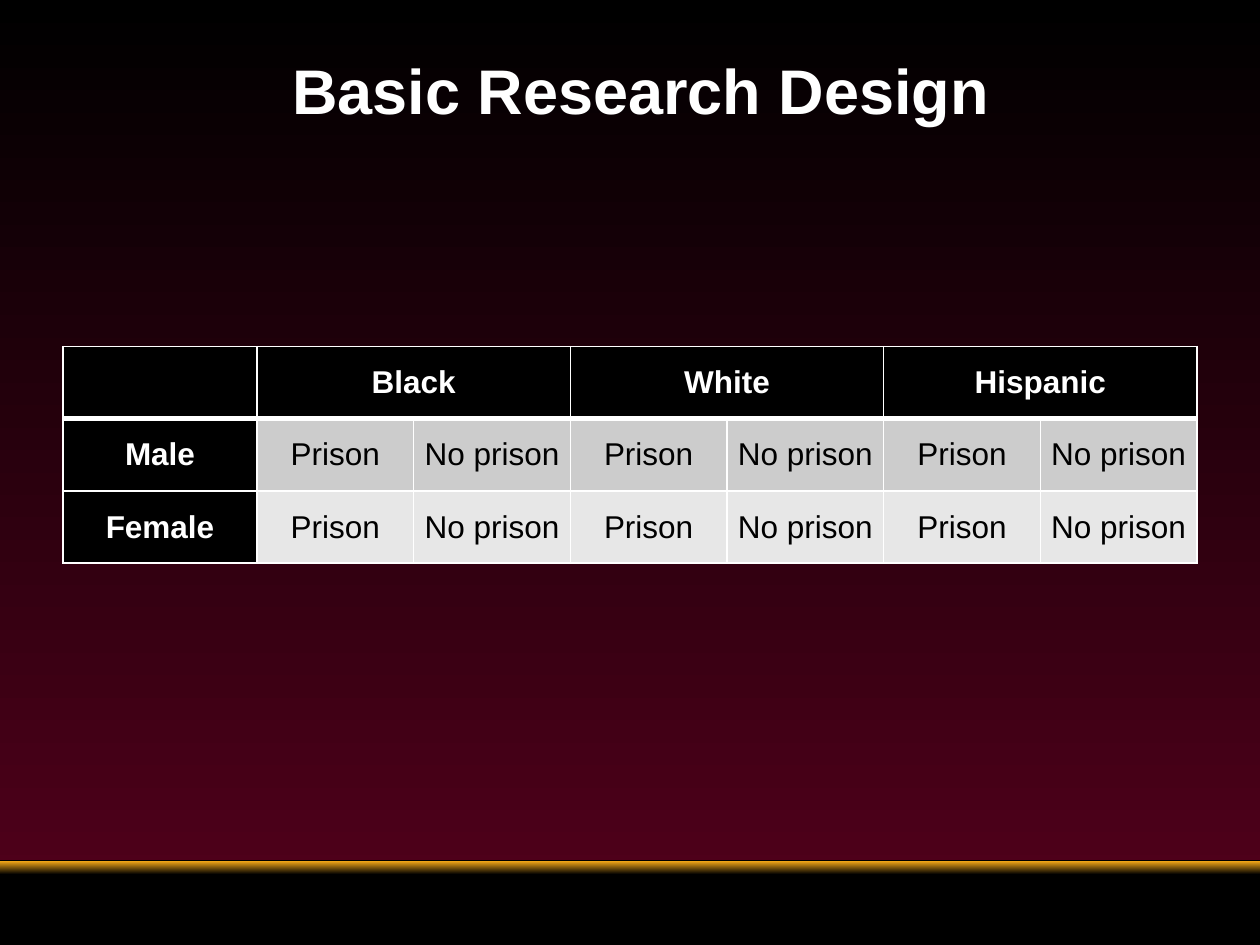
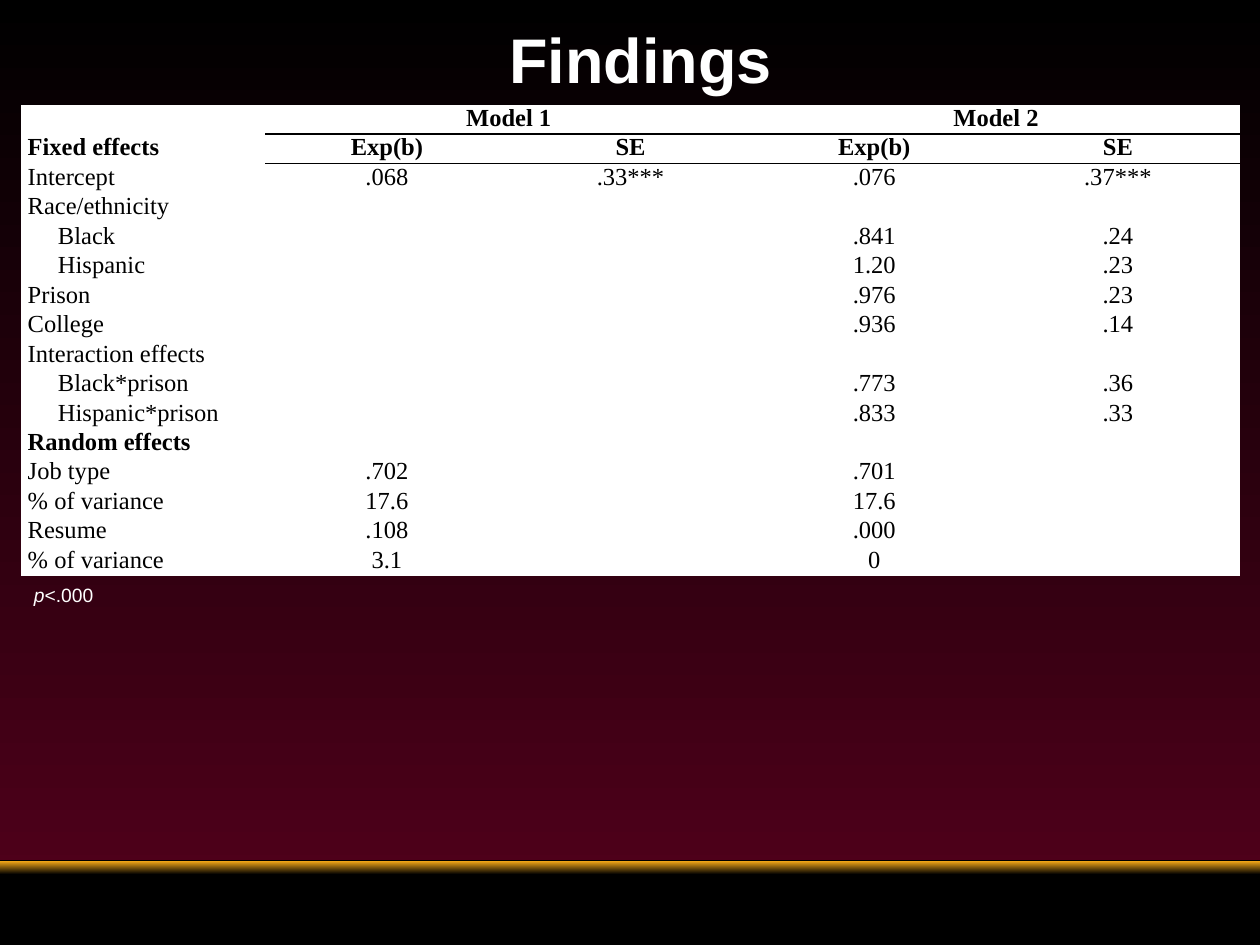
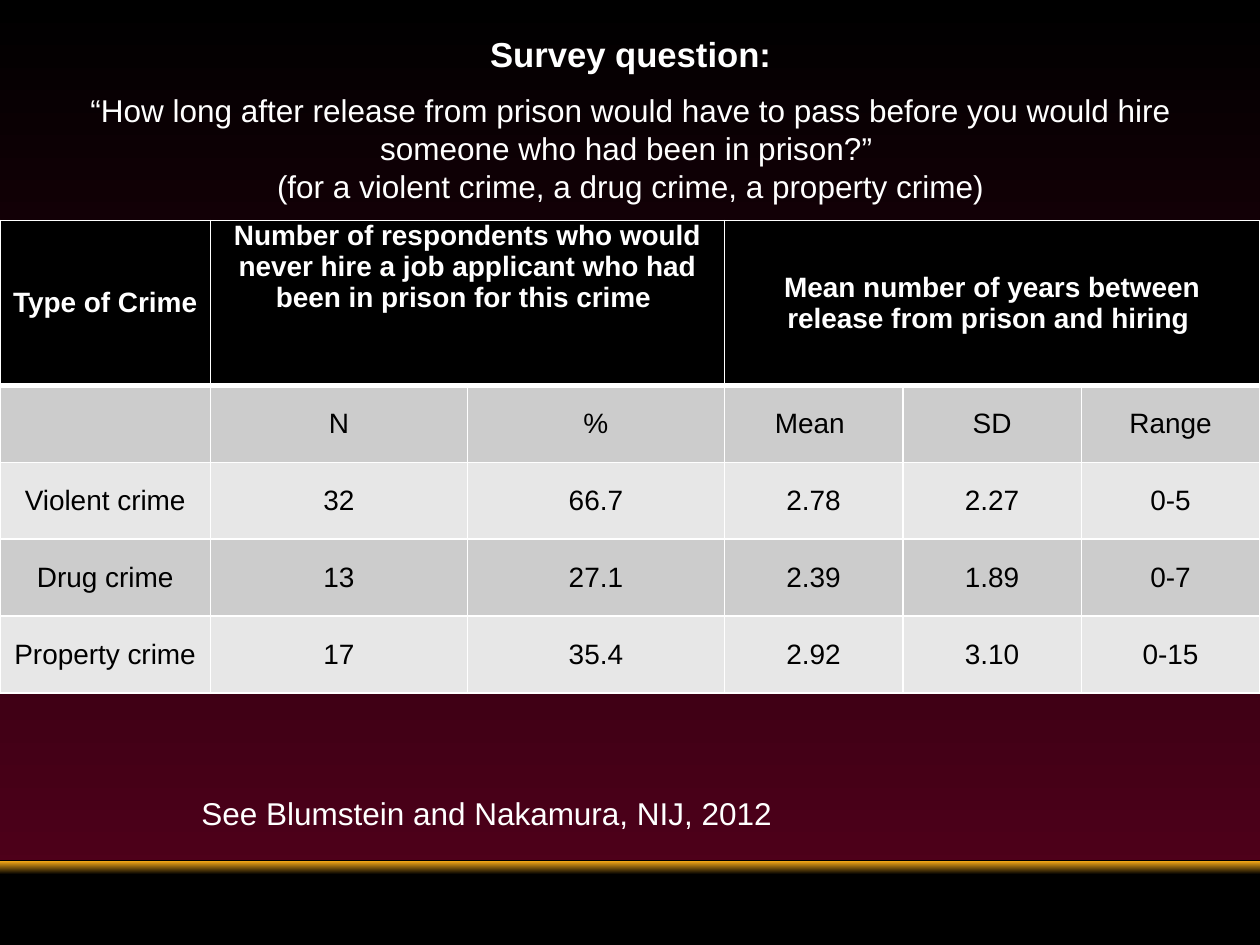
from dataclasses import dataclass, field

from lxml import etree
from pptx import Presentation
from pptx.dml.color import RGBColor
from pptx.enum.shapes import MSO_SHAPE
from pptx.enum.text import MSO_ANCHOR, PP_ALIGN
from pptx.oxml.ns import qn
from pptx.util import Inches, Pt

RECTANGLE = MSO_SHAPE.RECTANGLE
TOP, MIDDLE = MSO_ANCHOR.TOP, MSO_ANCHOR.MIDDLE
LEFT, CENTER = PP_ALIGN.LEFT, PP_ALIGN.CENTER

BLACK, WHITE = "000000", "FFFFFF"
MAROON, GOLD = "54001C", "FFAF18"
DARK_BAND, LIGHT_BAND = "CCCCCC", "E7E7E7"
SANS, SERIF = "Arial", "Times New Roman"
NO_STYLE_NO_GRID = "{2D5ABB26-0587-4C30-8999-92F81FD0307C}"

RESEARCH_DESIGN = [
    ["", "Black", "", "White", "", "Hispanic", ""],
    ["Male"] + ["Prison", "No prison"] * 3,
    ["Female"] + ["Prison", "No prison"] * 3,
]

FINDINGS = [
    ["", "Model 1", "", "Model 2", ""],
    ["Fixed effects", "Exp(b)", "SE", "Exp(b)", "SE"],
    ["Intercept", ".068", ".33***", ".076", ".37***"],
    ["Race/ethnicity", "", "", "", ""],
    ["Black", "", "", ".841", ".24"],
    ["Hispanic", "", "", "1.20", ".23"],
    ["Prison", "", "", ".976", ".23"],
    ["College", "", "", ".936", ".14"],
    ["Interaction effects", "", "", "", ""],
    ["Black*prison", "", "", ".773", ".36"],
    ["Hispanic*prison", "", "", ".833", ".33"],
    ["Random effects", "", "", "", ""],
    ["Job type", ".702", "", ".701", ""],
    ["% of variance", "17.6", "", "17.6", ""],
    ["Resume", ".108", "", ".000", ""],
    ["% of variance", "3.1", "", "0", ""],
]
FINDINGS_BOLD_ROWS = {0, 1, 11}
FINDINGS_INDENTED_ROWS = {4, 5, 9, 10}

HIRING_DELAY = [
    ["Type of Crime",
     "Number of respondents who would never hire a job applicant who had "
     "been in prison for this crime ", "",
     "Mean number of years between release from prison and hiring ", "", ""],
    ["", "N", "%", "Mean ", "SD", "Range"],
    ["Violent crime", "32", "66.7", "2.78", "2.27", "0-5"],
    ["Drug crime", "13", "27.1", "2.39", "1.89", "0-7"],
    ["Property crime", "17", "35.4", "2.92", "3.10", "0-15"],
]


def rgb(value):
    return RGBColor.from_string(value)


@dataclass
class CellStyle:
    fill: str = WHITE
    color: str = BLACK
    bold: bool = False
    align: int = CENTER
    anchor: int = MIDDLE
    indent: float = 0
    borders: dict = field(default_factory=dict)


def banded_style(row, header_column=False, top_cells=()):
    def style(r, c):
        dark = r == 0 or (header_column and c == 0)
        band = DARK_BAND if r % 2 else LIGHT_BAND
        borders = {"L": (WHITE, 1), "R": (WHITE, 1),
                   "T": (WHITE, 3 if r == row + 1 else 1),
                   "B": (WHITE, 3 if r == row else 1)}
        return CellStyle(BLACK if dark else band, WHITE if dark else BLACK, dark,
                         anchor=TOP if (r, c) in top_cells else MIDDLE,
                         borders=borders)
    return style


def findings_style(r, c):
    rule = {0: {"B": (BLACK, 1)}, 1: {"T": (BLACK, 1)}}.get(r, {}) if c else {}
    label = c == 0
    return CellStyle(bold=r in FINDINGS_BOLD_ROWS, align=LEFT if label else CENTER,
                     anchor=TOP, borders=rule,
                     indent=0.24 if label and r in FINDINGS_INDENTED_ROWS else 0)


class Deck:
    def __init__(self):
        self.prs = Presentation()
        self.prs.slide_width, self.prs.slide_height = Inches(10), Inches(7.5)
        self.slide = None

    def new_slide(self):
        self.slide = self.prs.slides.add_slide(self.prs.slide_layouts[6])
        self.gradient(self.slide.background.fill, BLACK, MAROON)
        footer = self.band(0.67)
        footer.fill.solid()
        footer.fill.fore_color.rgb = rgb(BLACK)
        footer.line.color.rgb = rgb(BLACK)
        footer.line.width = Pt(0.75)
        glow = self.band(0.11)
        self.gradient(glow.fill, GOLD, BLACK)
        glow.line.fill.background()

    def gradient(self, fill, first, last):
        fill.gradient()
        fill.gradient_angle = 270
        for stop, color, position in zip(fill.gradient_stops, (first, last), (0, 1)):
            stop.color.rgb = rgb(color)
            stop.position = position

    def band(self, height):
        band = self.slide.shapes.add_shape(
            RECTANGLE, 0, Inches(6.83), self.prs.slide_width, Inches(height))
        band.shadow.inherit = False
        return band

    def format_runs(self, paragraph, size, color=WHITE, font=SANS, bold=False):
        for run in paragraph.runs:
            run.font.size = Pt(size)
            run.font.name = font
            run.font.bold = bold
            run.font.color.rgb = rgb(color)

    def text(self, words, left, top, width, height, size, align=LEFT,
             anchor=TOP, bold=False, spacing=None, wrap=True):
        box = self.slide.shapes.add_textbox(
            Inches(left), Inches(top), Inches(width), Inches(height))
        frame = box.text_frame
        frame.word_wrap = wrap
        frame.vertical_anchor = anchor
        paragraph = frame.paragraphs[0]
        paragraph.text = words
        paragraph.alignment = align
        paragraph.line_spacing = spacing
        self.format_runs(paragraph, size, bold=bold)
        return paragraph

    def title(self, words, left, top, width, height, size=36):
        self.text(words, left, top, width, height, size, CENTER, MIDDLE, True, 0.9)

    def table(self, rows, left, top, widths, heights, style, size,
              merges=(), font=SANS, inset=0.07):
        frame = self.slide.shapes.add_table(
            len(rows), len(widths), Inches(left), Inches(top),
            Inches(sum(widths)), Inches(sum(heights)))
        table = frame.table
        table.first_row = table.horz_banding = False
        table._tbl.tblPr.find(qn("a:tableStyleId")).text = NO_STYLE_NO_GRID
        for column, width in zip(table.columns, widths):
            column.width = Inches(width)
        for row, height in zip(table.rows, heights):
            row.height = Inches(height)
        for r, words in enumerate(rows):
            for c, word in enumerate(words):
                self.cell(table.cell(r, c), word, style(r, c), size, font, inset)
        for r, first, last in merges:
            table.cell(r, first).merge(table.cell(r, last))

    def cell(self, cell, words, style, size, font, inset):
        cell.margin_left = cell.margin_right = Inches(inset)
        cell.margin_top = cell.margin_bottom = 0
        cell.vertical_anchor = style.anchor
        paragraph = cell.text_frame.paragraphs[0]
        paragraph.alignment = style.align
        if words:
            paragraph.text = words
            self.format_runs(paragraph, size, style.color, font, style.bold)
        else:
            end = etree.SubElement(paragraph._p, qn("a:endParaRPr"), sz=str(size * 100))
            etree.SubElement(end, qn("a:latin"), typeface=font)
        if style.indent:
            paragraph._p.get_or_add_pPr().set("marL", str(Inches(style.indent)))
        properties = cell._tc.get_or_add_tcPr()
        for side in "LRTB":
            if side in style.borders:
                color, width = style.borders[side]
                line = etree.SubElement(properties, qn(f"a:ln{side}"), w=str(Pt(width)))
                solid = etree.SubElement(line, qn("a:solidFill"))
                etree.SubElement(solid, qn("a:srgbClr"), val=color)
        cell.fill.solid()
        cell.fill.fore_color.rgb = rgb(style.fill)
        properties.append(properties.find(qn("a:solidFill")))


def research_design(deck):
    deck.new_slide()
    deck.title("Basic Research Design", 0.5, 0.25, 9.17, 1)
    deck.table(RESEARCH_DESIGN, 0.5, 2.75, [1.54] + [7.46 / 6] * 6, [1.72 / 3] * 3,
               banded_style(0, header_column=True), 18,
               merges=[(0, c, c + 1) for c in (1, 3, 5)])


def findings(deck):
    deck.new_slide()
    deck.title("Findings", 0.5, 0, 9.17, 1)
    deck.table(FINDINGS, 0.17, 0.83, [9.67 / 5] * 5, [3.48 / 16] * 16,
               findings_style, 14, font=SERIF, inset=0.05,
               merges=[(0, 1, 2), (0, 3, 4), (8, 0, 1), (11, 1, 2), (11, 3, 4)])
    note = deck.text("p", 0.17, 4.58, 9.67, 0.29, 11)
    note.runs[0].font.italic = True
    note.add_run().text = "<.000"
    deck.format_runs(note, 11)


def survey_question(deck):
    deck.new_slide()
    deck.title("Survey question:", 0.17, 0.08, 9.67, 0.73, 19.8)
    deck.table(HIRING_DELAY, 0, 1.75, [1.67] + [2.04] * 2 + [4.25 / 3] * 3,
               [1.31] + [0.61] * 4, banded_style(0, top_cells={(0, 1)}), 16,
               merges=[(0, 1, 2), (0, 3, 5)])
    deck.text("See Blumstein and Nakamura, NIJ, 2012", 1.5, 6.25, 4.77, 0.4, 18,
              wrap=False)
    deck.text("“How long after release from prison would have to pass before you "
              "would hire someone who had been in prison?” \v"
              "(for a violent crime, a drug crime, a property crime)",
              0.17, 0.67, 9.67, 1.01, 18, CENTER, spacing=Pt(21.7))


def main():
    deck = Deck()
    research_design(deck)
    findings(deck)
    survey_question(deck)
    deck.prs.save("out.pptx")


if __name__ == "__main__":
    main()
